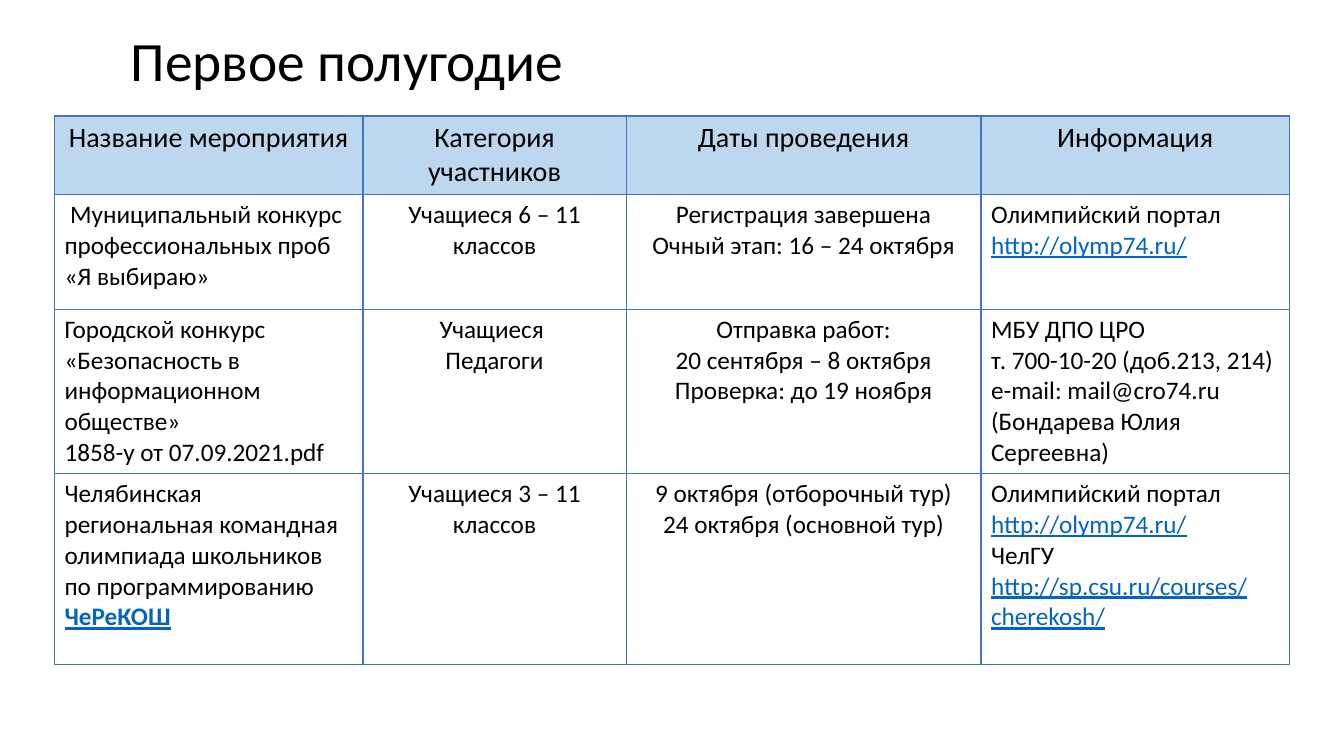
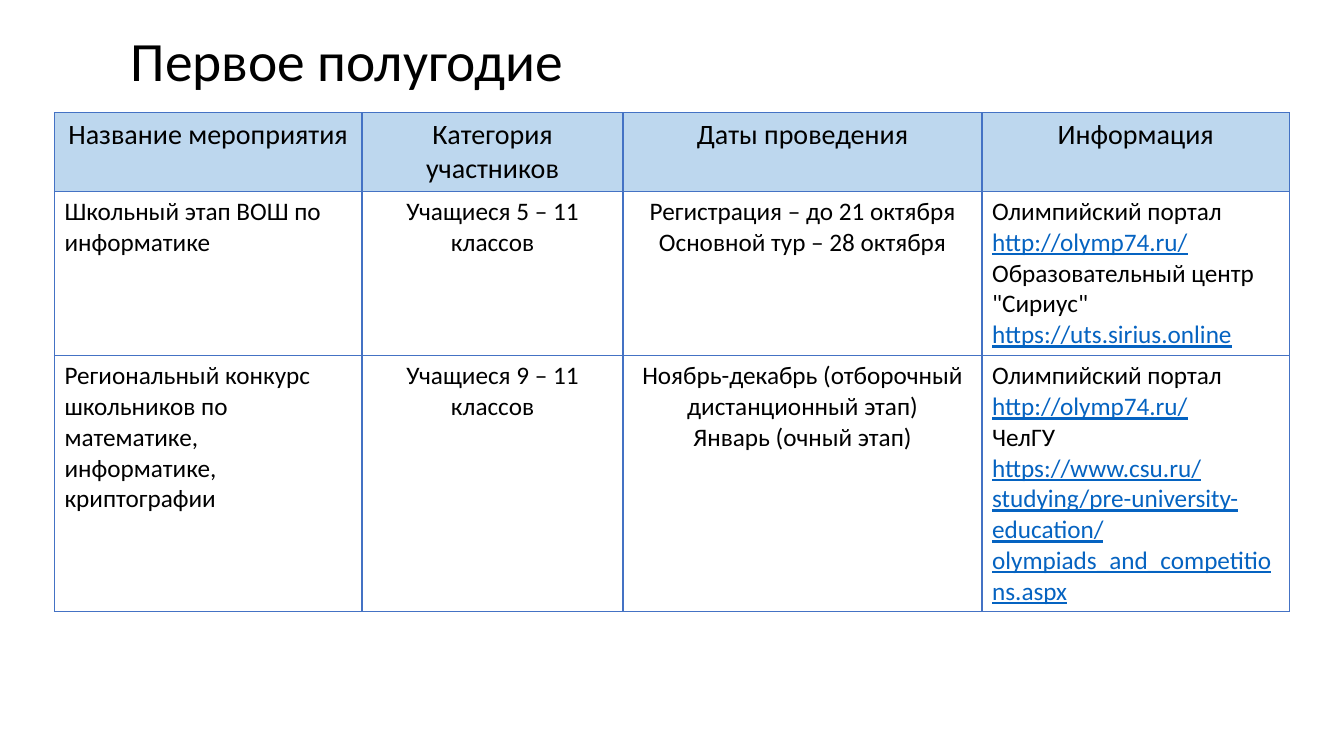
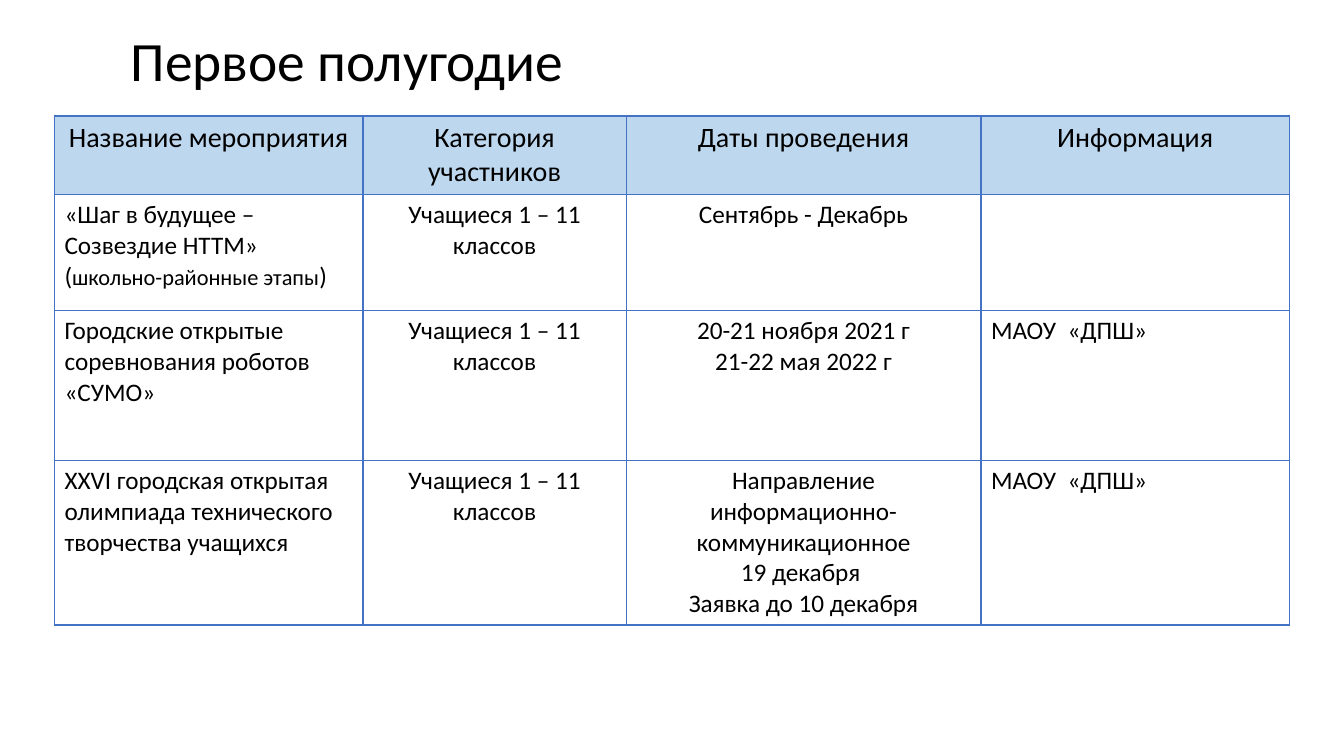
from lxml import etree
from pptx import Presentation
from pptx.dml.color import RGBColor
from pptx.enum.text import MSO_ANCHOR, PP_ALIGN
from pptx.oxml.ns import qn
from pptx.util import Pt

PX = 9144  # 100 px to the inch
FONT = "Calibri"
BLACK, WHITE = "000000", "FFFFFF"
HEADER_BLUE, BORDER_BLUE, LINK_BLUE = "BDD7EE", "4472C4", "0563C1"
CENTER, LEFT = PP_ALIGN.CENTER, PP_ALIGN.LEFT
MIDDLE = MSO_ANCHOR.MIDDLE

TITLE = "Первое полугодие"
HEADER = ["Название мероприятия", "Категория участников", "Даты проведения", "Информация"]
COLUMN_ALIGN = [LEFT, CENTER, CENTER, LEFT]
TABLE_LEFT = 54
BOLD_LINK = "ЧеРеКОШ"

SCHEDULES = [
    {
        "top": 115,
        "columns": [306, 261, 352, 306],
        "rows": [78, 114, 163, 189],
        "events": [
            [" Муниципальный конкурс профессиональных проб «Я выбираю»",
             "Учащиеся 6 – 11 классов",
             "Регистрация завершена\nОчный этап: 16 – 24 октября",
             "Олимпийский портал\nhttp://olymp74.ru/"],
            ["Городской конкурс «Безопасность в информационном обществе»\n"
             "1858-у от 07.09.2021.pdf",
             "Учащиеся \nПедагоги",
             "Отправка работ:\n20 сентября – 8 октября\nПроверка: до 19 ноября",
             "МБУ ДПО ЦРО\nт. 700-10-20 (доб.213, 214) e-mail: mail@cro74.ru\n"
             "(Бондарева Юлия Сергеевна)"],
            ["Челябинская региональная командная олимпиада школьников по программированию\n"
             + BOLD_LINK,
             "Учащиеся 3 – 11 классов",
             "9 октября (отборочный тур)\n24 октября (основной тур)",
             "Олимпийский портал\nhttp://olymp74.ru/\nЧелГУ\n"
             "http://sp.csu.ru/courses/cherekosh/"],
        ],
    },
    {
        "top": 112,
        "columns": [305, 259, 356, 305],
        "rows": [78, 163, 254],
        "events": [
            ["Школьный этап ВОШ по информатике",
             "Учащиеся 5 – 11 классов",
             "Регистрация – до 21 октября\nОсновной тур – 28 октября",
             "Олимпийский портал\nhttp://olymp74.ru/\nОбразовательный центр \"Сириус\"\n"
             "https://uts.sirius.online"],
            ["Региональный конкурс школьников по математике, информатике, криптографии",
             "Учащиеся 9 – 11 классов",
             "Ноябрь-декабрь (отборочный дистанционный этап)\nЯнварь (очный этап)",
             "Олимпийский портал\nhttp://olymp74.ru/\nЧелГУ\n"
             "https://www.csu.ru/studying/pre-university-education/"
             "olympiads_and_competitions.aspx"],
        ],
    },
    {
        "top": 115,
        "columns": [306, 261, 352, 306],
        "rows": [78, 115, 149, 163],
        "events": [
            ["«Шаг в будущее – Созвездие HTTM»\n(",
             "Учащиеся 1 – 11 классов",
             "Сентябрь - Декабрь",
             ""],
            ["Городские открытые соревнования роботов «СУМО»",
             "Учащиеся 1 – 11 классов",
             "20-21 ноября 2021 г\n21-22 мая 2022 г",
             "МАОУ  «ДПШ»"],
            ["XXVI городская открытая олимпиада технического творчества учащихся",
             "Учащиеся 1 – 11 классов",
             "Направление информационно- коммуникационное\n19 декабря \nЗаявка до 10 декабря",
             "МАОУ  «ДПШ»"],
        ],
    },
]


def style_font(font, size, color=BLACK):
    font.name = FONT
    font.size = Pt(size)
    font.color.rgb = RGBColor.from_string(color)


def frame_and_fill(cell, fill):
    """Borders go in first: the schema wants them ahead of the fill."""
    properties = cell._tc.get_or_add_tcPr()
    for side in ("a:lnL", "a:lnR", "a:lnT", "a:lnB"):
        border = etree.SubElement(properties, qn(side), w=str(Pt(1)))
        solid = etree.SubElement(border, qn("a:solidFill"))
        etree.SubElement(solid, qn("a:srgbClr"), val=BORDER_BLUE)
    cell.fill.solid()
    cell.fill.fore_color.rgb = RGBColor.from_string(fill)


prs = Presentation()
prs.slide_width, prs.slide_height = 1333 * PX, 750 * PX

for schedule in SCHEDULES:
    slide = prs.slides.add_slide(prs.slide_layouts[6])

    title = slide.shapes.add_textbox(120 * PX, 31 * PX, 1100 * PX, 65 * PX).text_frame
    title.word_wrap = True
    title.vertical_anchor = MIDDLE
    title.text = TITLE
    title.paragraphs[0].line_spacing = 0.9
    style_font(title.paragraphs[0].runs[0].font, 39.6)

    columns, rows = schedule["columns"], schedule["rows"]
    table = slide.shapes.add_table(
        len(rows), len(columns), TABLE_LEFT * PX, schedule["top"] * PX,
        sum(columns) * PX, sum(rows) * PX).table
    for column, width in zip(table.columns, columns):
        column.width = width * PX
    for row, height in zip(table.rows, rows):
        row.height = height * PX

    for r, texts in enumerate([HEADER] + schedule["events"]):
        is_header = r == 0
        for c, text in enumerate(texts):
            cell = table.cell(r, c)
            frame_and_fill(cell, HEADER_BLUE if is_header else WHITE)
            cell.text_frame.text = text
            for line in cell.text_frame.paragraphs:
                line.alignment = CENTER if is_header else COLUMN_ALIGN[c]
                for run in line.runs:
                    is_link = run.text.startswith("http") or run.text == BOLD_LINK
                    style_font(run.font, 20 if is_header else 18,
                               LINK_BLUE if is_link else BLACK)
                    run.font.underline = is_link
                    run.font.bold = run.text == BOLD_LINK

# The bracketed note on the last slide has smaller words between its brackets
stages_note = table.cell(1, 0).text_frame.paragraphs[1]
for text, size in (("школьно-районные этапы", 16), (")", 18)):
    run = stages_note.add_run()
    run.text = text
    style_font(run.font, size)

prs.save("out.pptx")
